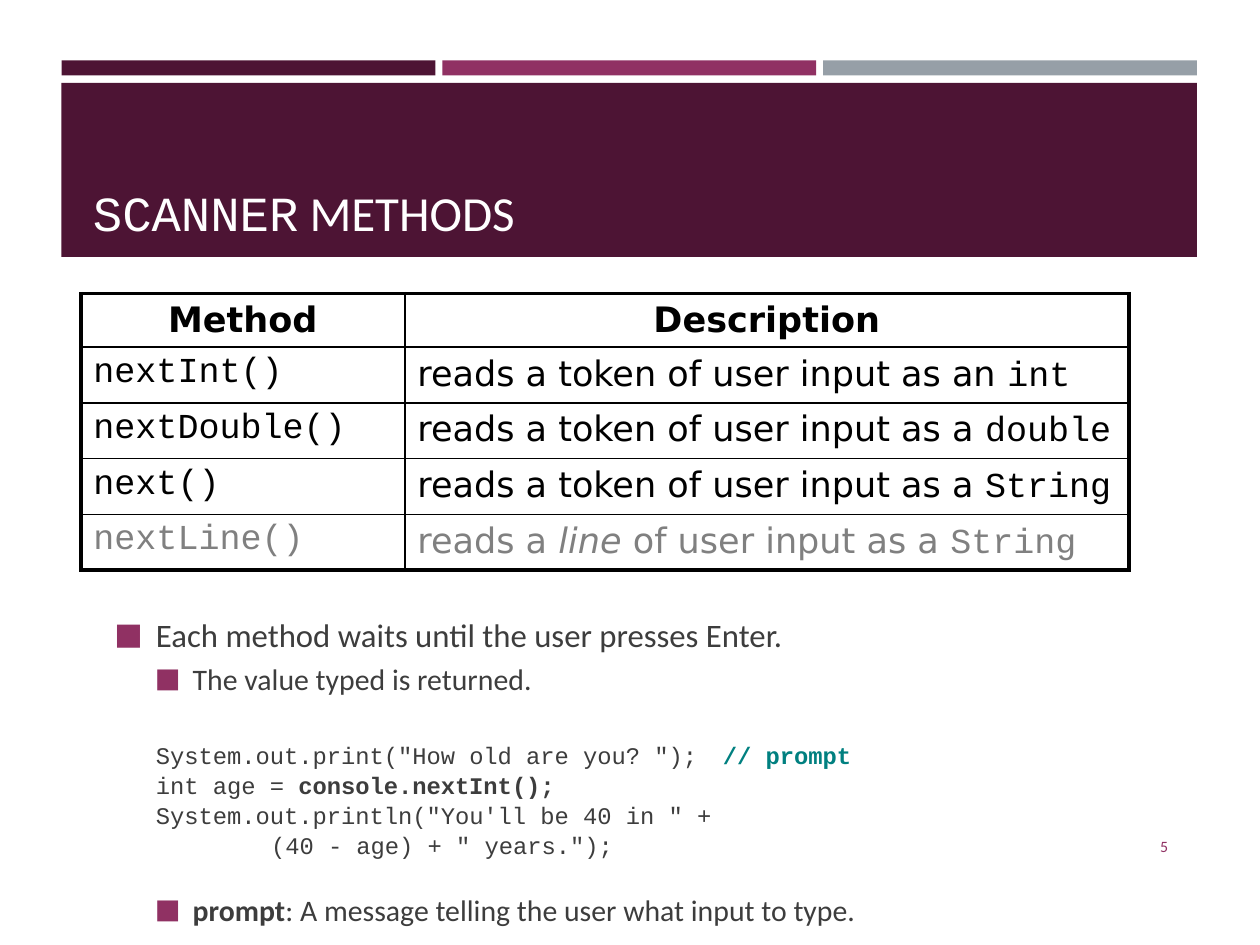
from lxml.etree import SubElement as Sub
from pptx import Presentation
from pptx.dml.color import RGBColor as Rgb
from pptx.enum.shapes import MSO_SHAPE as Shape
from pptx.enum.text import MSO_ANCHOR as Anchor, MSO_AUTO_SIZE as Fit, PP_ALIGN as Align
from pptx.oxml.ns import qn
from pptx.util import Cm, Pt

HUES = {"plum": "4D1434", "rose": "903163", "steel": "969FA7", "white": "FFFFFF",
        "black": "000000", "text": "3D3D3D", "gray": "808080", "teal": "008080"}
SANS, MONO, WIDE = "Calibri", "Courier New", "DejaVu Sans"


def style(font, size=None, name=None, hue=None, bold=None, slant=None):
    """Set only the font traits that are given."""
    if size:
        font.size = Pt(size)
    if name:
        font.name = name
    if hue:
        font.color.rgb = Rgb.from_string(HUES[hue])
    if bold is not None:
        font.bold = bold
    if slant is not None:
        font.italic = slant


def write(par, runs):
    """Fill a paragraph with (text, traits) pairs."""
    for text, traits in runs:
        run = par.add_run()
        run.text = text
        style(run.font, **traits)


def place(shape, box):
    shape.left, shape.top, shape.width, shape.height = map(Cm, box)


def add_bar(slide, box, hue):
    bar = slide.shapes.add_shape(Shape.RECTANGLE, *map(Cm, box))
    bar.shadow.inherit = False
    bar.fill.solid()
    bar.fill.fore_color.rgb = Rgb.from_string(HUES[hue])
    bar.line.fill.background()


def add_head(slide, box):
    """Three thin strips above a band that holds the title."""
    left, top, width, height = box
    gap, thin = 0.14, 0.3
    part = (width - 2 * gap) / 3
    for i, hue in enumerate(("plum", "rose", "steel")):
        add_bar(slide, (left + i * (part + gap), top, part, thin), hue)
    drop = thin + 0.15
    add_bar(slide, (left, top + drop, width, height - drop), "plum")

    title = slide.shapes.title
    title.element.getparent().append(title.element)  # bring in front of the band
    place(title, (left + 0.38, top + 0.69, width - 0.69, height - 0.87))
    frame = title.text_frame
    frame.auto_size = Fit.NONE
    frame.vertical_anchor = Anchor.BOTTOM
    par = frame.paragraphs[0]
    par.alignment = Align.LEFT
    style(par.font, 28, hue="white")
    write(par, [("SCANNER", {"name": MONO}), (" METHODS", {"name": SANS})])


def edge(cell, sides):
    """Draw cell borders; sides maps l, r, t, b to a width in points."""
    props = cell._tc.get_or_add_tcPr()
    for i, (side, width) in enumerate(sides.items()):
        line = props.makeelement(qn(f"a:ln{side.upper()}"), {"w": str(Pt(width))})
        props.insert(i, line)
        fill = Sub(line, qn("a:solidFill"))
        Sub(fill, qn("a:srgbClr"), val=HUES["black"])


def add_grid(slide, box):
    """Table of methods, with a thick frame and thin inner rules."""
    mono, wide = {"name": MONO}, {"name": WIDE}
    lead = "reads a token of user input as "
    rows = [
        ([("Method", wide)], [("Description", wide)]),
        ([("nextInt()", mono)], [(lead + "an ", wide), ("int", mono)]),
        ([("nextDouble()", mono)], [(lead + "a ", wide), ("double", mono)]),
        ([("next()", mono)], [(lead + "a ", wide), ("String", mono)]),
        ([("nextLine()", mono)],
         [("reads a ", wide), ("line", {"name": WIDE, "slant": True}),
          (" of user input as a ", wide), ("String", mono)]),
    ]
    last = len(rows) - 1
    grid = slide.shapes.add_table(len(rows), 2, *map(Cm, box)).table
    grid.first_row = grid.horz_banding = False
    grid.columns[0].width = Cm(6.53)
    grid.columns[1].width = Cm(box[2] - 6.53)
    for r, row in enumerate(rows):
        grid.rows[r].height = Cm(1.08 if r == 0 else 1.12)
        for c, runs in enumerate(row):
            cell = grid.cell(r, c)
            cell.fill.background()
            edge(cell, {"l": 1 if c else 2.25, "r": 2.25 if c else 1,
                        "t": 1 if r else 2.25, "b": 2.25 if r == last else 1})
            par = cell.text_frame.paragraphs[0]
            par.alignment = Align.LEFT if r else Align.CENTER
            style(par.font, 20, hue="gray" if r == last else "black", bold=r == 0)
            write(par, runs)


def set_list(par, left, hang, mark):
    """Set the indents and the bullet of a paragraph."""
    props = par._p.get_or_add_pPr()
    props.set("marL", str(Cm(left)))
    props.set("indent", str(Cm(-hang)))
    if not mark:
        Sub(props, qn("a:buNone"))
        return
    Sub(Sub(props, qn("a:buClr")), qn("a:srgbClr"), val=HUES["rose"])
    Sub(props, qn("a:buSzPct"), val="92000")
    Sub(props, qn("a:buFont"), typeface=SANS)
    Sub(props, qn("a:buChar"), char="■")


def add_notes(slide, box):
    """Bullets around a code sample."""
    body = slide.placeholders[1]
    body.element.getparent().append(body.element)
    place(body, box)
    frame = body.text_frame
    frame.auto_size = Fit.NONE
    frame.vertical_anchor = Anchor.TOP
    frame.margin_top = frame.margin_bottom = 0

    # kind: level, left, hang, size, font, line height
    kinds = {"main": (0, 1.75, 0.84, 18.7, SANS, 22),
             "sub": (1, 2.49, 0.76, 17, SANS, 18),
             "code": (0, 1.75, 0, 13.6, MONO, 17),
             "wrap": (0, 4.07, 0, 13.6, MONO, 17)}
    bold = {"bold": True}
    lines = [  # kind, space before, runs
        ("main", 0, [("Each method waits until the user presses Enter.", {})]),
        ("sub", 6, [("The value typed is returned.", {})]),
        ("code", 25, [('System.out.print("How old are you? ");\t', {}),
                      ("// prompt", {"hue": "teal", "bold": True})]),
        ("code", 0, [("int age = ", {}), ("console.nextInt();", bold)]),
        ("code", 0, [('System.out.println("You\'ll be 40 in " +', {})]),
        ("wrap", 0, [('(40 - age) + " years.");', {})]),
        ("sub", 21, [("prompt", bold),
                     (": A message telling the user what input to type.", {})]),
    ]
    for i, (kind, space, runs) in enumerate(lines):
        level, left, hang, size, font, pitch = kinds[kind]
        par = frame.add_paragraph() if i else frame.paragraphs[0]
        par.level = level
        par.alignment = Align.LEFT
        par.line_spacing = Pt(pitch)
        par.space_before, par.space_after = Pt(space), Pt(0)
        set_list(par, left, hang, mark=hang > 0)
        if "\t" in runs[0][0]:
            tabs = Sub(par._p.pPr, qn("a:tabLst"))
            Sub(tabs, qn("a:tab"), pos=str(Cm(13.82)), algn="l")
        style(par.font, size, font, "text")
        write(par, runs)


def add_count(slide, box):
    """Slide number."""
    frame = slide.shapes.add_textbox(*map(Cm, box)).text_frame
    frame.word_wrap = True
    frame.vertical_anchor = Anchor.MIDDLE
    par = frame.paragraphs[0]
    par.alignment = Align.RIGHT
    style(par.font, 9, SANS, "rose")
    write(par, [("5", {})])


def main():
    deck = Presentation()
    deck.slide_width, deck.slide_height = Cm(25.4), Cm(19.05)
    slide = deck.slides.add_slide(deck.slide_layouts[1])
    add_head(slide, (1.24, 1.22, 22.89, 3.96))
    add_notes(slide, (1.14, 12.41, 22.2, 6.64))
    add_grid(slide, (1.63, 5.92, 21.13, 5.56))
    add_count(slide, (21.67, 16.54, 2.13, 1.02))
    deck.save("out.pptx")


if __name__ == "__main__":
    main()
